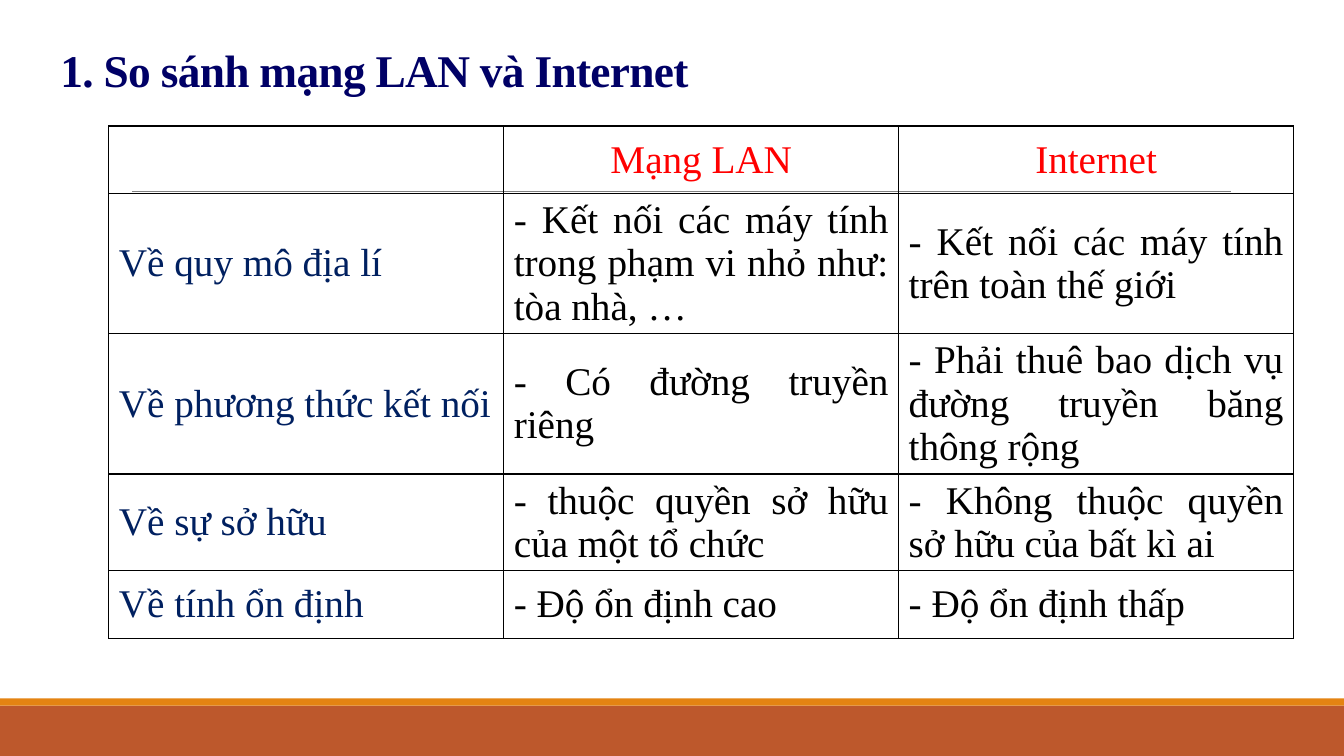
from lxml import etree
from pptx import Presentation
from pptx.dml.color import RGBColor
from pptx.enum.shapes import MSO_CONNECTOR, MSO_SHAPE
from pptx.enum.text import MSO_ANCHOR, MSO_AUTO_SIZE, PP_ALIGN
from pptx.oxml.ns import qn
from pptx.util import Inches, Pt

STRAIGHT = MSO_CONNECTOR.STRAIGHT
RECTANGLE = MSO_SHAPE.RECTANGLE
MIDDLE, BOTTOM = MSO_ANCHOR.MIDDLE, MSO_ANCHOR.BOTTOM
CENTER, JUSTIFY = PP_ALIGN.CENTER, PP_ALIGN.JUSTIFY
NO_AUTOFIT = MSO_AUTO_SIZE.NONE

FONT = "Times New Roman"
COLORS = {
    "title": "000066",
    "heading": "FF0000",
    "criterion": "002060",
    "body": "000000",
    "border": "000000",
    "rule": "808080",
    "footer": "BD582C",
    "stripe": "E48312",
}
ROWS = [
    ("", "Mạng LAN", "Internet"),
    ("Về quy mô địa lí",
     "- Kết nối các máy tính trong phạm vi nhỏ như: tòa nhà, …",
     "- Kết nối các máy tính trên toàn thế giới"),
    ("Về phương thức kết nối",
     "- Có đường truyền riêng",
     "- Phải thuê bao dịch vụ đường truyền băng thông rộng"),
    ("Về sự sở hữu",
     "- thuộc quyền sở hữu của một tổ chức",
     "- Không thuộc quyền sở hữu của bất kì ai"),
    ("Về tính ổn định", "- Độ ổn định cao", "- Độ ổn định thấp"),
]
ROW_HEIGHTS = [0.67, 1.39, 1.39, 0.96, 0.67]
TABLE_WIDTH = 11.75


def format_text(paragraph, size, color, alignment):
    paragraph.alignment = alignment
    for span in paragraph.runs:
        span.font.name = FONT
        span.font.size = Pt(size)
        span.font.color.rgb = RGBColor.from_string(COLORS[color])


def add_borders(cell):
    properties = cell._tc.get_or_add_tcPr()
    for position, side in enumerate(("lnL", "lnR", "lnT", "lnB")):
        line = etree.Element(qn(f"a:{side}"), w=str(Pt(1)))
        fill = etree.SubElement(line, qn("a:solidFill"))
        etree.SubElement(fill, qn("a:srgbClr"), val=COLORS["border"])
        properties.insert(position, line)


deck = Presentation()
deck.slide_width = Inches(13.33)
deck.slide_height = Inches(7.5)
page = deck.slides.add_slide(deck.slide_layouts[5])

for top, height, color in ((7, 0.5, "footer"), (6.93, 0.07, "stripe")):
    band = page.shapes.add_shape(
        RECTANGLE, 0, Inches(top), deck.slide_width, Inches(height))
    band.shadow.inherit = False
    band.fill.solid()
    band.fill.fore_color.rgb = RGBColor.from_string(COLORS[color])
    band.line.fill.background()

rule = page.shapes.add_connector(
    STRAIGHT, Inches(1.31), Inches(1.9), Inches(12.21), Inches(1.9))
rule.line.color.rgb = RGBColor.from_string(COLORS["rule"])
rule.line.width = Pt(0.5)
etree.SubElement(rule._element.spPr, qn("a:effectLst"))

title = page.shapes.title
title.left, title.top = Inches(0.5), Inches(0.44)
title.width, title.height = Inches(9), Inches(0.57)
title.text_frame.text = "1. So sánh mạng LAN và Internet"
title.text_frame.word_wrap = True
title.text_frame.auto_size = NO_AUTOFIT
title.text_frame.vertical_anchor = BOTTOM
heading = title.text_frame.paragraphs[0]
heading.line_spacing = 0.85
format_text(heading, 32.4, "title", JUSTIFY)
heading.runs[0].font.bold = True
heading.runs[0].font._element.set("spc", "-50")

table = page.shapes.add_table(
    len(ROWS), len(ROWS[0]), Inches(1.08), Inches(1.25),
    Inches(TABLE_WIDTH), Inches(sum(ROW_HEIGHTS))).table
table.first_row = False
table.horz_banding = False
for column in table.columns:
    column.width = Inches(TABLE_WIDTH / len(ROWS[0]))

for row_index, texts in enumerate(ROWS):
    table.rows[row_index].height = Inches(ROW_HEIGHTS[row_index])
    for column_index, text in enumerate(texts):
        cell = table.cell(row_index, column_index)
        cell.text = text
        cell.fill.background()
        cell.vertical_anchor = MIDDLE
        add_borders(cell)
        if row_index == 0:
            color, alignment = "heading", CENTER
        else:
            color = "body" if column_index else "criterion"
            alignment = JUSTIFY
        format_text(cell.text_frame.paragraphs[0], 28, color, alignment)

deck.save("out.pptx")
